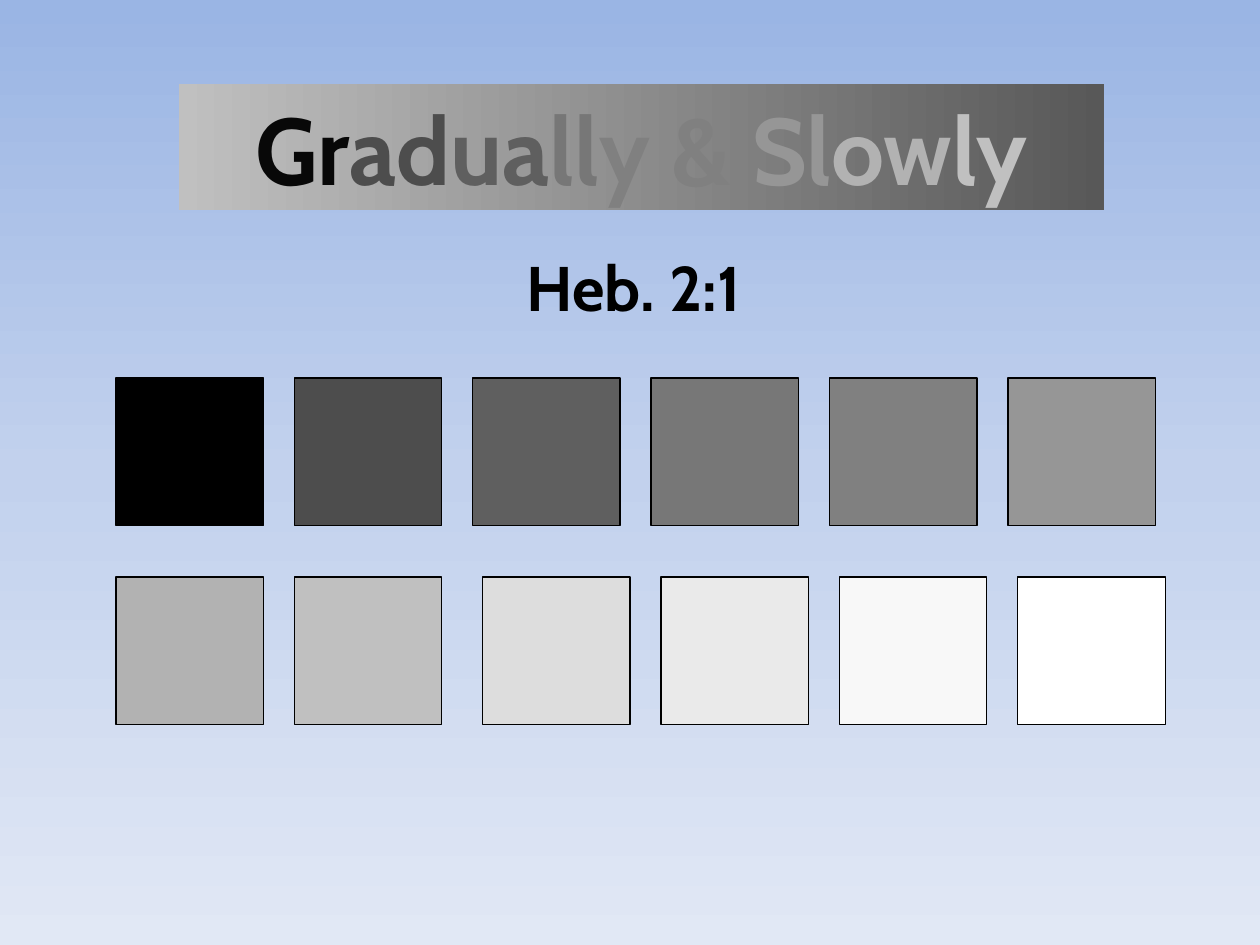
import copy

import pptx
import pptx.util
from pptx.dml.color import RGBColor
from pptx.enum.shapes import MSO_SHAPE
from pptx.enum.text import MSO_ANCHOR, MSO_AUTO_SIZE, PP_ALIGN
from pptx.oxml.ns import qn
from pptx.util import Inches

FONT = "Cabin"
BLACK = RGBColor(0, 0, 0)
SKY = [(0, RGBColor(0x9A, 0xB5, 0xE4)), (0.5, RGBColor(0xC2, 0xD1, 0xED)),
       (1, RGBColor(0xE1, 0xE8, 0xF5))]
BANNER = [(0, RGBColor(0xC0, 0xC0, 0xC0)), (1, RGBColor(0x58, 0x58, 0x58))]

TITLE = [("Gr", 0x08), ("ad", 0x4D), ("ua", 0x5F), ("ll", 0x77),
         ("y & ", 0x80), ("Sl", 0x96), ("ow", 0xB2), ("ly", 0xC0)]
VERSE = [("Heb. 2:1", 0x00)]

SIDE, PITCH = 1.17, 1.416
# Each group of swatches: left, top, grey levels
SWATCHES = [
    (0.92, 3, [0x00, 0x4D, 0x5F, 0x77, 0x80, 0x96]),
    (0.92, 4.58, [0xB2, 0xC0]),
    (3.83, 4.58, [0xDD, 0xEA, 0xF8, 0xFF]),
]


def grey(level):
    return RGBColor(level, level, level)


def fill_gradient(fill, element, stops, angle):
    """Fill with (position, colour) stops; element holds the fill's XML."""
    fill.gradient()
    fill.gradient_angle = angle
    stop_list = next(element.iter(qn("a:gsLst")))
    while len(stop_list) < len(stops):
        stop_list.append(copy.deepcopy(stop_list[-1]))
    for stop, (position, colour) in zip(fill.gradient_stops, stops):
        stop.position = position
        stop.color.rgb = colour


def write_text(box, spans, size, align=PP_ALIGN.LEFT):
    frame = box.text_frame
    frame.word_wrap = False
    frame.auto_size = MSO_AUTO_SIZE.SHAPE_TO_FIT_TEXT
    frame.vertical_anchor = MSO_ANCHOR.TOP
    para = frame.paragraphs[0]
    para.alignment = align
    for text, level in spans:
        span = para.add_run()
        span.text = text
        span.font.name = FONT
        span.font.size = pptx.util.Pt(size)
        span.font.bold = True
        span.font.color.rgb = grey(level)


def add_rectangle(page, left, top, width, height):
    box = page.shapes.add_shape(MSO_SHAPE.RECTANGLE, Inches(left), Inches(top),
                                Inches(width), Inches(height))
    box.shadow.inherit = False
    return box


def main():
    deck = pptx.Presentation()
    deck.slide_width, deck.slide_height = Inches(10), Inches(7.5)
    page = deck.slides.add_slide(deck.slide_layouts[6])
    fill_gradient(page.background.fill, page.element, SKY, 270)

    banner = add_rectangle(page, 1.42, 0.67, 7.34, 1)
    fill_gradient(banner.fill, banner.element, BANNER, 0)
    banner.line.fill.background()
    write_text(banner, TITLE, 54, PP_ALIGN.CENTER)

    for left, top, levels in SWATCHES:
        for column, level in enumerate(levels):
            swatch = add_rectangle(page, left + column * PITCH, top, SIDE, SIDE)
            swatch.fill.solid()
            swatch.fill.fore_color.rgb = grey(level)
            swatch.line.color.rgb = BLACK
            swatch.line.width = pptx.util.Pt(0.75)

    verse = page.shapes.add_textbox(Inches(4.08), Inches(1.92),
                                    Inches(2.32), Inches(0.7))
    write_text(verse, VERSE, 36)
    deck.save("out.pptx")


if __name__ == "__main__":
    main()
